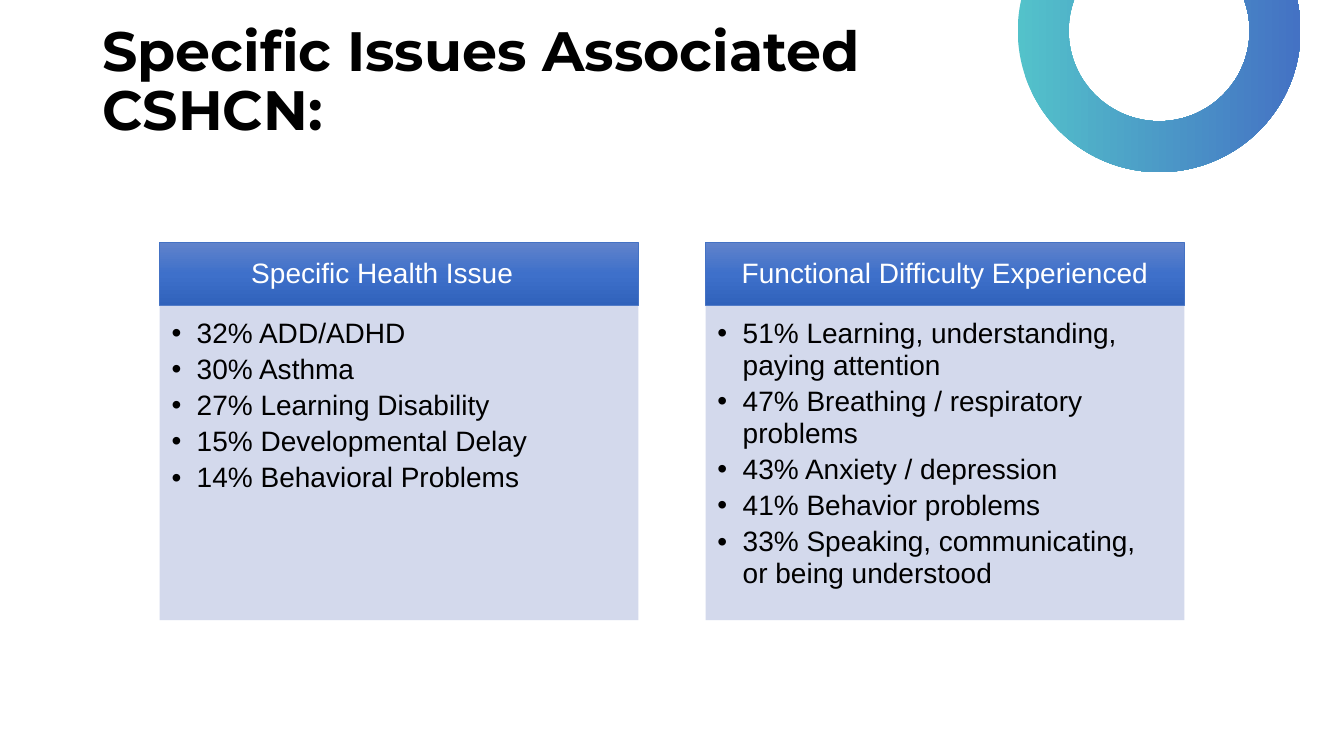
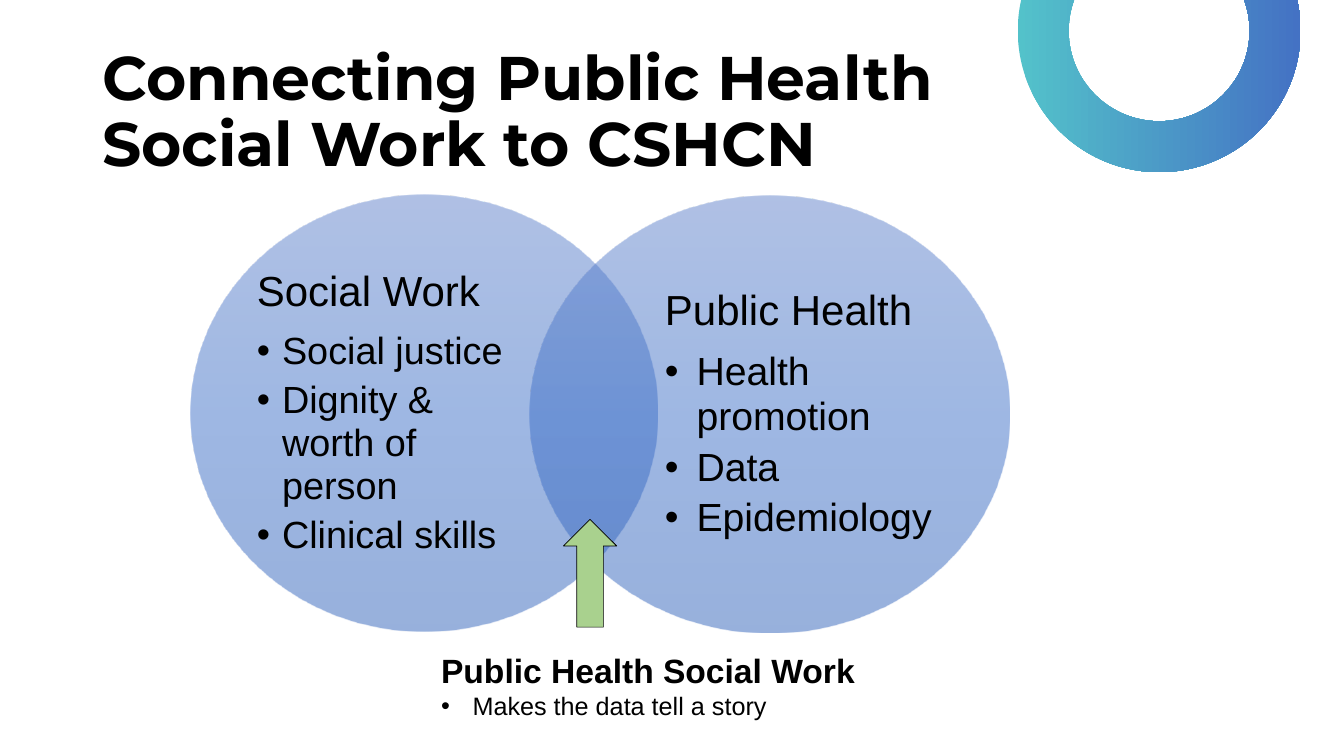
from dataclasses import dataclass

from lxml import etree
from pptx import Presentation
from pptx.dml.color import RGBColor
from pptx.enum.shapes import MSO_SHAPE
from pptx.enum.text import MSO_ANCHOR, PP_ALIGN
from pptx.oxml.ns import qn
from pptx.util import Pt

COLORS = {
    "black": "000000",
    "white": "FFFFFF",
    "teal": "53C2CA",
    "blue": "4472C4",
    "blue_light": "6183CB",
    "blue_middle": "3E70CA",
    "blue_dark": "3062BB",
    "panel": "CFD5EA",
    "green": "A9D18E",
}
BLUE_FADE = ["blue_light", "blue_middle", "blue_dark"]
TITLE_FONT, BODY_FONT = "Montserrat", "Arial"
LINE_SPACING = 0.95


@dataclass
class Frame:
    left: float
    top: float
    width: float
    height: float


@dataclass
class Line:
    text: str
    size: float
    color: str = "black"
    bold: bool = False
    font: str = BODY_FONT
    indent: float = 0  # a positive indent makes a bullet
    after: float = 0
    spacing: float = LINE_SPACING
    align: PP_ALIGN = PP_ALIGN.LEFT


@dataclass
class Panel:
    heading: str
    items: list[str]
    heading_right: float = 11.5


@dataclass
class Circle:
    frame: Frame
    text_frame: Frame
    heading: str
    items: list[str]
    size: float
    indent: float


def rgb(name: str) -> RGBColor:
    return RGBColor.from_string(COLORS[name])


# Fills and lines
def set_alpha(color_element, percent: int) -> None:
    etree.SubElement(color_element, qn("a:alpha")).set("val", str(percent * 1000))


def fill_solid(shape, color: str, alpha: int = 100) -> None:
    shape.fill.solid()
    shape.fill.fore_color.rgb = rgb(color)
    if alpha < 100:
        set_alpha(shape._element.spPr.find(qn("a:solidFill"))[0], alpha)


def fill_gradient(shape, names: list[str], angle: int, alpha: int = 100) -> None:
    shape.fill.gradient()
    shape.fill.gradient_angle = angle
    stops = shape._element.spPr.find(qn("a:gradFill")).find(qn("a:gsLst"))
    for stop in list(stops):
        stops.remove(stop)
    for index, name in enumerate(names):
        stop = etree.SubElement(stops, qn("a:gs"))
        stop.set("pos", str(index * 100000 // (len(names) - 1)))
        color = etree.SubElement(stop, qn("a:srgbClr"))
        color.set("val", COLORS[name])
        if alpha < 100:
            set_alpha(color, alpha)


def set_line(shape, color: str = "") -> None:
    if color:
        shape.line.color.rgb = rgb(color)
        shape.line.width = Pt(0.5)
    else:
        shape.line.fill.background()


# Shapes and text
def add_shape(page, kind: MSO_SHAPE, frame: Frame):
    shape = page.shapes.add_shape(
        kind, Pt(frame.left), Pt(frame.top), Pt(frame.width), Pt(frame.height))
    shape.shadow.inherit = False
    return shape


def write(shape, lines: list[Line], anchor: MSO_ANCHOR,
          insets: tuple[float, float, float, float]) -> None:
    text = shape.text_frame
    text.word_wrap = True
    text.vertical_anchor = anchor
    text.margin_left, text.margin_top, text.margin_right, text.margin_bottom = map(Pt, insets)
    for index, line in enumerate(lines):
        para = text.add_paragraph() if index else text.paragraphs[0]
        if line.indent:
            properties = para._p.get_or_add_pPr()
            properties.set("marL", str(Pt(line.indent)))
            properties.set("indent", str(-Pt(line.indent)))
            etree.SubElement(properties, qn("a:buFont")).set("typeface", BODY_FONT)
            etree.SubElement(properties, qn("a:buChar")).set("char", "•")
        para.alignment = line.align
        para.line_spacing = line.spacing
        para.space_after = Pt(line.after)
        span = para.add_run()
        span.text = line.text
        span.font.name = line.font
        span.font.size = Pt(line.size)
        span.font.bold = line.bold
        span.font.color.rgb = rgb(line.color)


def add_text(page, frame: Frame, lines: list[Line], anchor: MSO_ANCHOR = MSO_ANCHOR.MIDDLE,
             insets: tuple[float, float, float, float] = (0, 0, 0, 0)) -> None:
    box = page.shapes.add_textbox(
        Pt(frame.left), Pt(frame.top), Pt(frame.width), Pt(frame.height))
    write(box, lines, anchor, insets)


def bullets(items: list[str], size: float, indent: float) -> list[Line]:
    return [Line(item, size, indent=indent, after=size * 0.15) for item in items]


# Shared page: corner ring and title
def add_page(deck, title: str, size: float, top: float, width: float):
    page = deck.slides.add_slide(deck.slide_layouts[6])
    ring = add_shape(page, MSO_SHAPE.DONUT, Frame(727, -79, 202, 202))
    ring.adjustments[0] = 0.18
    fill_gradient(ring, ["teal", "blue"], 0)
    set_line(ring)
    heading = Line(title, size, bold=True, font=TITLE_FONT, spacing=0.9)
    add_text(page, Frame(66, top, width, 104.5), [heading], insets=(7.2, 3.6, 7.2, 3.6))
    return page


def add_panel(page, panel: Panel, left: float) -> None:
    header = add_shape(page, MSO_SHAPE.RECTANGLE, Frame(left, 173, 342, 45.5))
    fill_gradient(header, BLUE_FADE, 270)
    set_line(header, "blue")
    write(header, [Line(panel.heading, 20, "white", align=PP_ALIGN.CENTER)],
          MSO_ANCHOR.MIDDLE, (11.5, 6.5, panel.heading_right, 6.5))
    body = add_shape(page, MSO_SHAPE.RECTANGLE, Frame(left, 218.5, 342, 224.5))
    fill_solid(body, "panel", 90)
    set_line(body)
    write(body, bullets(panel.items, 20, 18), MSO_ANCHOR.TOP, (8.5, 8.5, 11.5, 12))


def add_circle(page, circle: Circle) -> None:
    ellipse = add_shape(page, MSO_SHAPE.OVAL, circle.frame)
    fill_gradient(ellipse, BLUE_FADE, 270, 50)
    set_line(ellipse)
    lines = [Line(circle.heading, 30, after=10.5)]
    lines += bullets(circle.items, circle.size, circle.indent)
    add_text(page, circle.text_frame, lines)


PANELS = [
    Panel("Specific Health Issue", [
        "32% ADD/ADHD",
        "30% Asthma",
        "27% Learning Disability",
        "15% Developmental Delay",
        "14% Behavioral Problems",
    ], heading_right=35.5),
    Panel("Functional Difficulty Experienced", [
        "51% Learning, understanding, paying attention",
        "47% Breathing / respiratory problems",
        "43% Anxiety / depression",
        "41% Behavior problems",
        "33% Speaking, communicating, or being understood",
    ]),
]
CIRCLES = [
    Circle(Frame(136.5, 139, 333, 312), Frame(183.5, 175.5, 191.5, 238.5), "Social Work",
           ["Social justice", "Dignity & worth of person", "Clinical skills"], 27, 18),
    Circle(Frame(378, 139.5, 343, 312), Frame(475, 176.5, 197.5, 238.5), "Public Health",
           ["Health promotion", "Data", "Epidemiology"], 28, 22.5),
]


def main() -> None:
    deck = Presentation()
    deck.slide_width, deck.slide_height = Pt(960), Pt(540)

    # Issues in two panels
    page = add_page(deck, "Specific Issues Associated CSHCN:", 39.6, 7, 648)
    for index, panel in enumerate(PANELS):
        add_panel(page, panel, 114 + 390 * index)

    # Overlapping circles with a marked intersection
    page = add_page(deck, "Connecting Public Health Social Work to CSHCN", 44, 29, 683)
    for circle in CIRCLES:
        add_circle(page, circle)
    arrow = add_shape(page, MSO_SHAPE.UP_ARROW, Frame(402.5, 371, 38, 77))
    fill_solid(arrow, "green")
    set_line(arrow, "black")
    add_text(page, Frame(308, 461, 312.5, 58.5), [
        Line("Public Health Social Work", 24, bold=True, spacing=1),
        Line("Makes the data tell a story", 18, indent=22.5, spacing=1),
    ], MSO_ANCHOR.TOP, (7.2, 3.6, 7.2, 3.6))

    deck.save("out.pptx")


if __name__ == "__main__":
    main()
